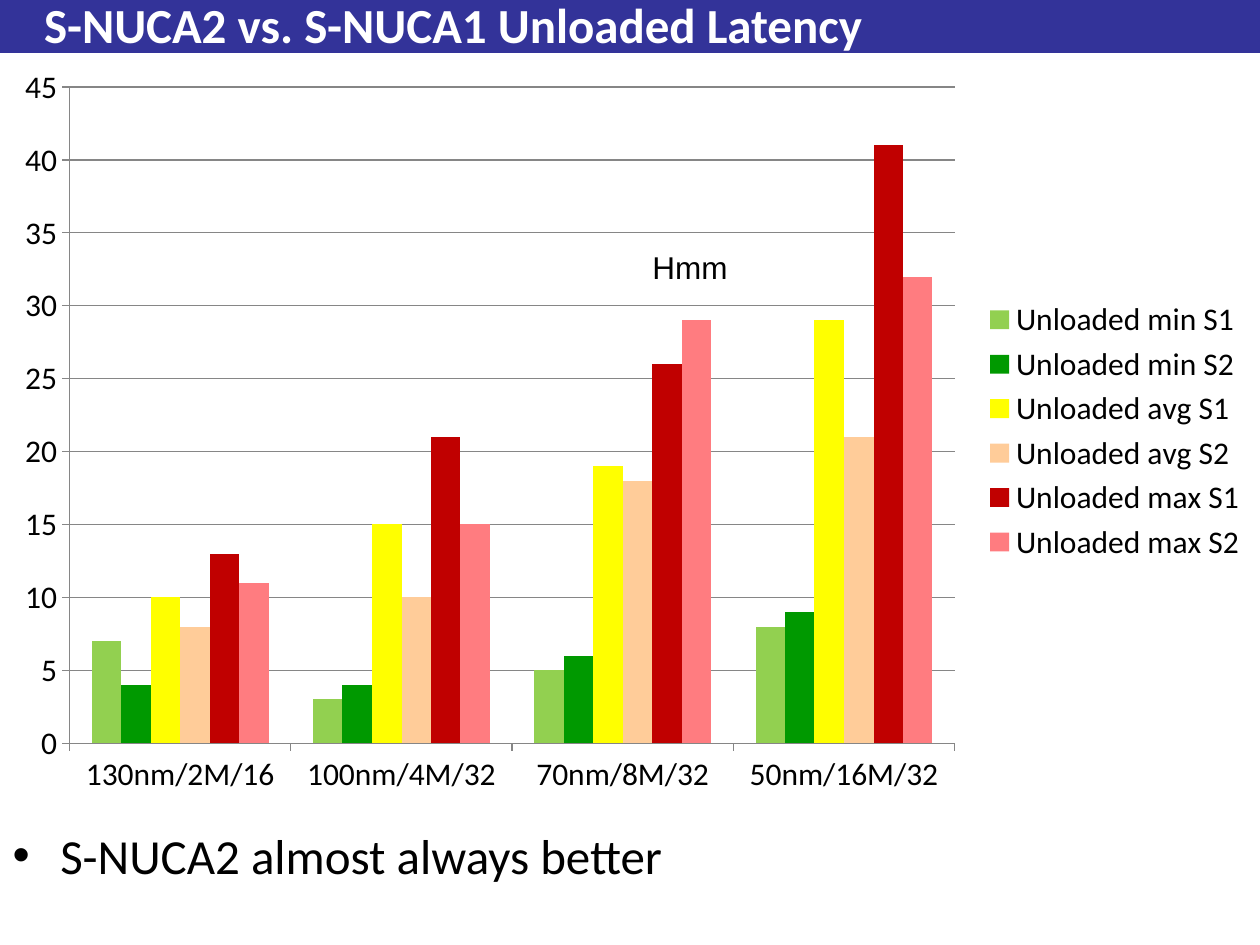
import pptx
import pptx.chart.data
import pptx.dml.color
import pptx.enum.chart
import pptx.enum.shapes
import pptx.enum.text
import pptx.util
from lxml import etree

COLORS = {"band": "333399", "title": "FFFFFF", "text": "000000", "grid": "868686"}
SERIES = [
    ("Unloaded min S1", (7, 3, 5, 8), "92D050"),
    ("Unloaded min S2", (4, 4, 6, 9), "009900"),
    ("Unloaded avg S1", (10, 15, 19, 29), "FFFF00"),
    ("Unloaded avg S2", (8, 10, 18, 21), "FFCC99"),
    ("Unloaded max S1", (13, 21, 26, 41), "C00000"),
    ("Unloaded max S2", (11, 15, 29, 32), "FF7C80"),
]
CATEGORIES = ("130nm/2M/16", "100nm/4M/32", "70nm/8M/32", "50nm/16M/32")

deck = pptx.Presentation()
deck.slide_width = pptx.util.Inches(10)
deck.slide_height = pptx.util.Inches(7.5)
page = deck.slides.add_slide(deck.slide_layouts[1])
title, body = page.placeholders


def area(left, top, width, height):
    """Turn inches into the four lengths of a box."""
    return [pptx.util.Inches(length) for length in (left, top, width, height)]


def write(box, text, size, font, color, bold=False):
    """Add one formatted run to the first paragraph of a box."""
    box.text_frame.auto_size = pptx.enum.text.MSO_AUTO_SIZE.NONE
    para = box.text_frame.paragraphs[0]
    para.alignment = pptx.enum.text.PP_ALIGN.LEFT
    span = para.add_run()
    span.text = text
    span.font.size = pptx.util.Pt(size)
    span.font.name = font
    span.font.bold = bold
    span.font.color.rgb = pptx.dml.color.RGBColor.from_string(COLORS[color])
    return para


# Title band, placed behind the title
band = page.shapes.add_shape(pptx.enum.shapes.MSO_SHAPE.RECTANGLE, *area(0, 0, 10, 0.42))
band.shadow.inherit = False
band.fill.solid()
band.fill.fore_color.rgb = pptx.dml.color.RGBColor.from_string(COLORS["band"])
band.line.fill.background()
title._element.addprevious(band._element)

title.left, title.top, title.width, title.height = area(0.25, 0.05, 9.25, 0.28)
title.text_frame.vertical_anchor = pptx.enum.text.MSO_ANCHOR.MIDDLE
write(title, "S-NUCA2 vs. S-NUCA1 Unloaded Latency", 28, "Calibri", "title", bold=True)

# Bullet list
body.left, body.top, body.width, body.height = area(0, 6.5, 10, 1)
item = write(body, "S-NUCA2 almost always better", 28, "Calibri", "text")
item.space_before = pptx.util.Pt(5.6)
properties = item._p.get_or_add_pPr()
indent = pptx.util.Inches(0.38)
properties.set("marL", str(indent))
properties.set("indent", str(-indent))
bullet = etree.SubElement(properties, pptx.oxml.ns.qn("a:buChar"))
bullet.set("char", "•")

# Latency chart
data = pptx.chart.data.CategoryChartData()
data.categories = CATEGORIES
for name, values, color in SERIES:
    data.add_series(name, values)
chart = page.shapes.add_chart(
    pptx.enum.chart.XL_CHART_TYPE.COLUMN_CLUSTERED, *area(0, 0.42, 10, 6), data
).chart
chart.has_title = False
chart.font.size = pptx.util.Pt(18)
chart.font.name = "Calibri"
chart.font.color.rgb = pptx.dml.color.RGBColor.from_string(COLORS["text"])
chart.has_legend = True
chart.legend.position = pptx.enum.chart.XL_LEGEND_POSITION.RIGHT
chart.legend.include_in_layout = False

plot = chart.plots[0]
plot.gap_width = 150
plot.overlap = 0
plot.vary_by_categories = False
for series, (name, values, color) in zip(plot.series, SERIES):
    series.format.fill.solid()
    series.format.fill.fore_color.rgb = pptx.dml.color.RGBColor.from_string(color)

chart.value_axis.minimum_scale = 0
chart.value_axis.maximum_scale = 45
chart.value_axis.major_unit = 5
chart.value_axis.has_major_gridlines = True
for axis in (chart.category_axis, chart.value_axis):
    axis.major_tick_mark = pptx.enum.chart.XL_TICK_MARK.OUTSIDE
    axis.minor_tick_mark = pptx.enum.chart.XL_TICK_MARK.NONE
for ruled in (chart.category_axis, chart.value_axis, chart.value_axis.major_gridlines):
    ruled.format.line.width = pptx.util.Pt(0.75)
    ruled.format.line.color.rgb = pptx.dml.color.RGBColor.from_string(COLORS["grid"])

# Remark over the 70nm columns
remark = page.shapes.add_textbox(*area(5.08, 1.92, 0.81, 0.4))
write(remark, "Hmm", 18, "Arial", "text")
remark.text_frame.word_wrap = False
remark.text_frame.auto_size = pptx.enum.text.MSO_AUTO_SIZE.SHAPE_TO_FIT_TEXT

deck.save("out.pptx")
